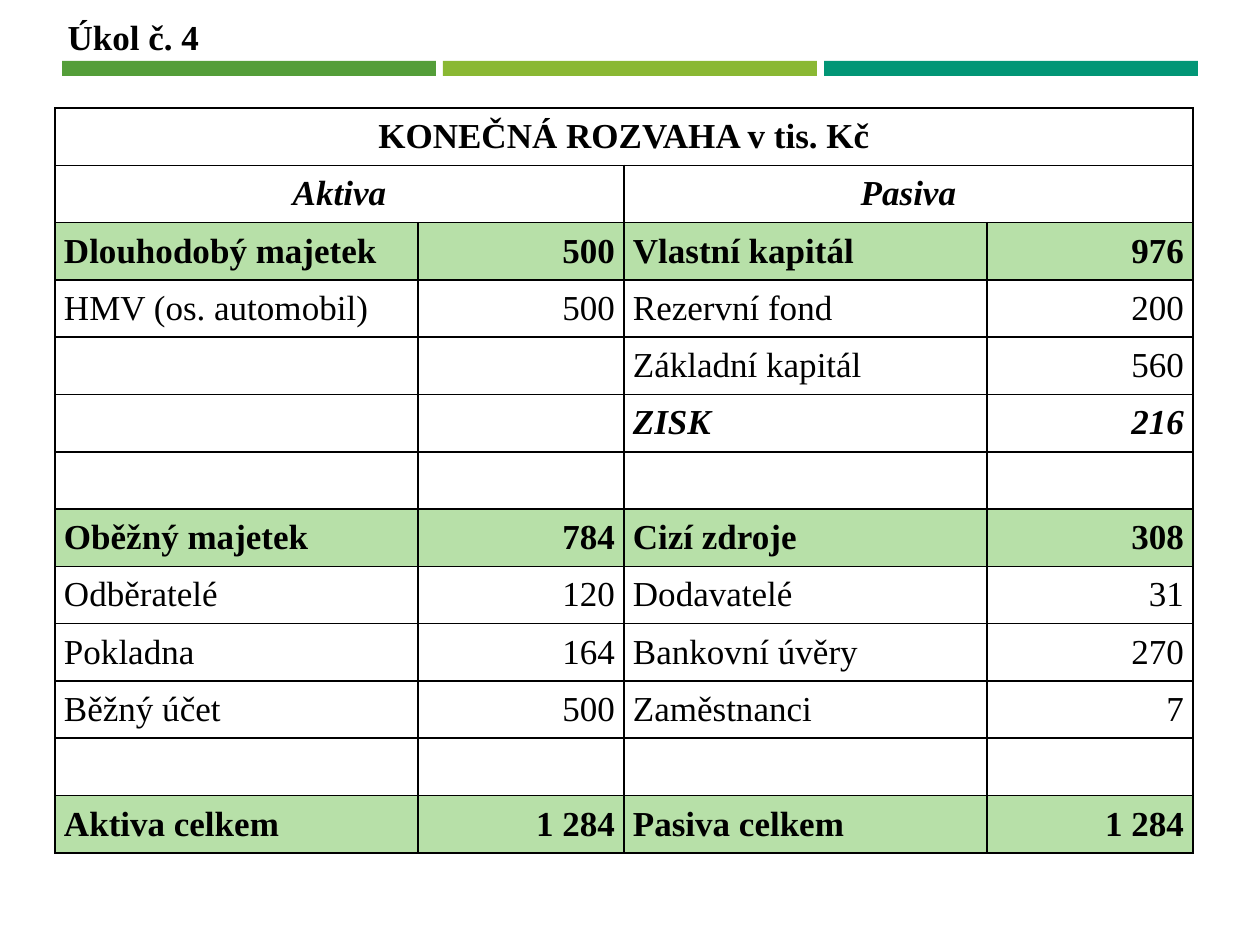
from dataclasses import dataclass
from lxml.etree import SubElement as Sub
from pptx import Presentation
from pptx.dml.color import RGBColor as RGB
from pptx.enum.shapes import MSO_SHAPE as Shape
from pptx.enum.text import MSO_ANCHOR as Anchor, MSO_AUTO_SIZE as Fit, PP_ALIGN as Align
from pptx.oxml.ns import qn
from pptx.util import Pt


@dataclass
class Theme:
    face: str = "Times New Roman"
    size: int = 20
    ink: str = "000000"
    band: str = "B7E0A8"
    bars: tuple = ("549E39", "8AB833", "029676")
    rule: int = 1


theme = Theme()


def px(n):
    return round(n * 914400 / 126)


def style(para, bold=False, slant=False, align=Align.LEFT):
    para.alignment = align
    font = para.font
    font.name, font.size = theme.face, Pt(theme.size)
    font.bold, font.italic = bold, slant
    font.color.rgb = RGB.from_string(theme.ink)


deck = Presentation()
deck.slide_width, deck.slide_height = px(1260), px(945)
slide = deck.slides.add_slide(deck.slide_layouts[5])

for i, color in enumerate(theme.bars):
    bar = slide.shapes.add_shape(Shape.RECTANGLE, px(62 + 381 * i), px(61), px(374), px(15))
    bar.shadow.inherit = False
    bar.fill.solid()
    bar.fill.fore_color.rgb = RGB.from_string(color)
    bar.line.fill.background()

title = slide.shapes.title
title.left, title.top, title.width, title.height = px(55), px(9), px(158), px(55)
frame = title.text_frame
frame.text = "Úkol č. 4"
frame.word_wrap = False
frame.auto_size = Fit.SHAPE_TO_FIT_TEXT
frame.vertical_anchor = Anchor.MIDDLE
style(frame.paragraphs[0], bold=True)

rows = [
    ("KONEČNÁ ROZVAHA v tis. Kč", "", "", ""),
    ("Aktiva", "", "Pasiva", ""),
    ("Dlouhodobý majetek", "500", "Vlastní kapitál", "976"),
    ("HMV (os. automobil)", "500", "Rezervní fond", "200"),
    ("", "", "Základní kapitál", "560"),
    ("", "", "ZISK", "216"),
    ("", "", "", ""),
    ("Oběžný majetek", "784", "Cizí zdroje", "308"),
    ("Odběratelé", "120", "Dodavatelé", "31"),
    ("Pokladna", "164", "Bankovní úvěry", "270"),
    ("Běžný účet", "500", "Zaměstnanci", "7"),
    ("", "", "", ""),
    ("Aktiva celkem", "1 284", "Pasiva celkem", "1 284"),
]
heads, sums, slants = (0, 1), (2, 7, 12), (1, 5)
wides = (363, 206, 363, 206)

grid = slide.shapes.add_table(len(rows), 4, px(55), px(108), px(sum(wides)), px(745)).table
grid.first_row = grid.horz_banding = False
for col, wide in zip(grid.columns, wides):
    col.width = px(wide)

for r, row in enumerate(rows):
    for c, text in enumerate(row):
        cell = grid.cell(r, c)
        cell.text = text
        cell.vertical_anchor = Anchor.MIDDLE
        cell.margin_left = cell.margin_right = px(9)
        cell.margin_top = cell.margin_bottom = 0
        align = Align.CENTER if r in heads else Align.RIGHT if c % 2 else Align.LEFT
        style(cell.text_frame.paragraphs[0], r in heads + sums + slants, r in slants, align)
        props = cell._tc.get_or_add_tcPr()
        for side in ("a:lnL", "a:lnR", "a:lnT", "a:lnB"):
            line = Sub(props, qn(side), w=str(Pt(theme.rule)))
            Sub(Sub(line, qn("a:solidFill")), qn("a:srgbClr"), val=theme.ink)
        if r in sums:
            cell.fill.solid()
            cell.fill.fore_color.rgb = RGB.from_string(theme.band)
        else:
            cell.fill.background()

for r, a, b in ((0, 0, 3), (1, 0, 1), (1, 2, 3)):
    grid.cell(r, a).merge(grid.cell(r, b))

deck.save("out.pptx")
